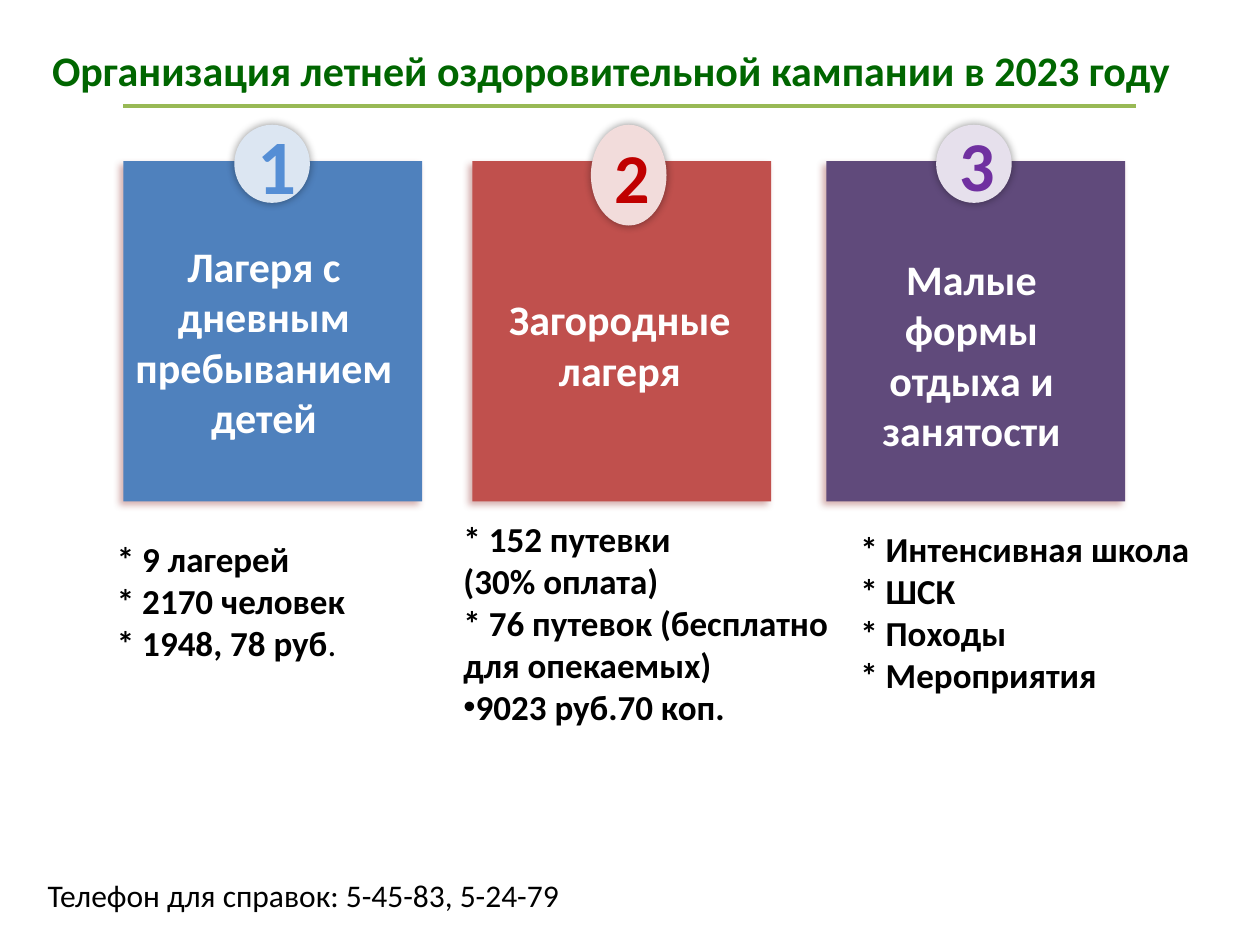
from lxml.etree import SubElement
from pptx import Presentation
from pptx.dml.color import RGBColor
from pptx.enum.shapes import MSO_CONNECTOR as Connector, MSO_SHAPE as Shape
from pptx.enum.text import MSO_ANCHOR as Anchor, PP_ALIGN as Align
from pptx.oxml.ns import qn
from pptx.util import Inches, Pt

TITLE = "Организация летней оздоровительной кампании в 2023 году"
PHONE = "Телефон для справок: 5-45-83, 5-24-79"
CARDS = [
    dict(number="1", number_size=44, left=0.98, fill="4F81BD",
         badge=(1.86, 0.99, 0.6, 0.62), badge_fill="DCE6F2", badge_text="558ED5",
         heading="Лагеря с дневным пребыванием детей",
         heading_box=(0.93, 1.86, 2.33, 1.72), heading_inset=0.05,
         details=["* 9 лагерей", "* 2170 человек", "* 1948, 78 руб"],
         details_box=(0.83, 4.22, 2.44, 1.11), ending="."),
    dict(number="2", number_size=40, left=3.75, fill="C0504D",
         badge=(4.69, 0.99, 0.6, 0.8), badge_fill="F2DCDB", badge_text="C00000",
         heading="Загородные лагеря",
         heading_box=(3.82, 1.94, 2.2, 1.25), heading_inset=0.39,
         details=["* 152 путевки", "(30% оплата)",
                  "* 76 путевок (бесплатно для опекаемых)", "•9023 руб.70 коп."],
         details_box=(3.58, 4.06, 3.15, 2.12), ending=""),
    dict(number="3", number_size=40, left=6.56, fill="604A7B",
         badge=(7.43, 0.99, 0.6, 0.62), badge_fill="E6E0EC", badge_text="7030A0",
         heading="Малые формы отдыха и занятости",
         heading_box=(6.57, 1.62, 2.28, 2.05), heading_inset=0.39,
         details=["* Интенсивная школа", "* ШСК", "* Походы", "* Мероприятия"],
         details_box=(6.73, 4.14, 2.83, 1.45), ending=""),
]
CARD_TOP, CARD_WIDTH, CARD_HEIGHT = 1.28, 2.37, 2.7
THEME = dict(
    font="Calibri", title="006600", rule="98B955", text="000000", heading="FFFFFF",
    title_size=24, heading_size=24, details_size=20, phone_size=18,
    card_shadow=dict(color="953735", blur=4, distance=3, angle=135),
    badge_shadow=dict(color="000000", blur=5, distance=0, angle=0),
)


def rgb(value):
    return RGBColor.from_string(value)


def inches(box):
    return [Inches(value) for value in box]


def add_run(paragraph, text, color, size, bold=True):
    run = paragraph.add_run()
    run.text = text
    formats = dict(name=THEME["font"], size=Pt(size), bold=bold)
    for name, value in formats.items():
        setattr(run.font, name, value)
    run.font.color.rgb = rgb(color)


def add_shadow(shape, color, blur, distance, angle):
    shape.shadow.inherit = False
    effects = shape._element.spPr.find(qn("a:effectLst"))
    shadow = SubElement(effects, qn("a:outerShdw"), blurRad=str(Pt(blur)),
                        dist=str(Pt(distance)), dir=str(angle * 60000),
                        algn="ctr", rotWithShape="0")
    tint = SubElement(shadow, qn("a:srgbClr"), val=color)
    SubElement(tint, qn("a:alpha"), val="40000")


def add_filled(slide, kind, box, fill, shadow):
    shape = slide.shapes.add_shape(kind, *inches(box))
    shape.fill.solid()
    shape.fill.fore_color.rgb = rgb(fill)
    shape.line.fill.background()
    add_shadow(shape, **shadow)
    return shape


def add_text(slide, box, lines, color, size, bold=True, align=Align.LEFT,
             wrap=True, inset=0.05):
    frame = slide.shapes.add_textbox(*inches(box)).text_frame
    frame.word_wrap = wrap
    frame.margin_top = Inches(inset)
    for index, line in enumerate(lines):
        paragraph = frame.add_paragraph() if index else frame.paragraphs[0]
        paragraph.alignment = align
        if line.startswith("•"):
            properties = paragraph._p.get_or_add_pPr()
            SubElement(properties, qn("a:buFont"), typeface="Arial")
            SubElement(properties, qn("a:buChar"), char="•")
        add_run(paragraph, line.lstrip("•"), color, size, bold)
    return frame


def add_title(slide):
    title = slide.shapes.title
    places = dict(zip(("left", "top", "width", "height"),
                      inches((0.2, 0.13, 9.3, 1.25))))
    for name, value in places.items():
        setattr(title, name, value)
    frame = title.text_frame
    formats = dict(word_wrap=True, vertical_anchor=Anchor.MIDDLE,
                   margin_bottom=Inches(0.45))
    for name, value in formats.items():
        setattr(frame, name, value)
    paragraph = frame.paragraphs[0]
    paragraph.alignment = Align.CENTER
    add_run(paragraph, TITLE, THEME["title"], THEME["title_size"])


def add_rule(slide):
    rule = slide.shapes.add_connector(Connector.STRAIGHT,
                                      *inches((0.98, 0.84, 9.02, 0.84)))
    rule.line.color.rgb = rgb(THEME["rule"])
    rule.line.width = Pt(2.25)
    SubElement(rule._element.spPr, qn("a:effectLst"))


def add_card(slide, card):
    add_filled(slide, Shape.RECTANGLE,
               (card["left"], CARD_TOP, CARD_WIDTH, CARD_HEIGHT),
               card["fill"], THEME["card_shadow"])
    badge = add_filled(slide, Shape.OVAL, card["badge"], card["badge_fill"],
                       THEME["badge_shadow"])
    badge.text_frame.vertical_anchor = Anchor.MIDDLE
    paragraph = badge.text_frame.paragraphs[0]
    paragraph.alignment = Align.CENTER
    add_run(paragraph, card["number"], card["badge_text"], card["number_size"])
    add_text(slide, card["heading_box"], [card["heading"]], THEME["heading"],
             THEME["heading_size"], align=Align.CENTER, inset=card["heading_inset"])
    details = add_text(slide, card["details_box"], card["details"], THEME["text"],
                       THEME["details_size"])
    if card["ending"]:
        add_run(details.paragraphs[-1], card["ending"], THEME["text"],
                THEME["details_size"], bold=False)


def main():
    presentation = Presentation()
    presentation.slide_width, presentation.slide_height = inches((10, 7.5))
    slide = presentation.slides.add_slide(presentation.slide_layouts[5])
    add_title(slide)
    add_rule(slide)
    for card in CARDS:
        add_card(slide, card)
    add_text(slide, (0.28, 6.9, 4.36, 0.4), [PHONE], THEME["text"],
             THEME["phone_size"], bold=False, wrap=False)
    presentation.save("out.pptx")


if __name__ == "__main__":
    main()
